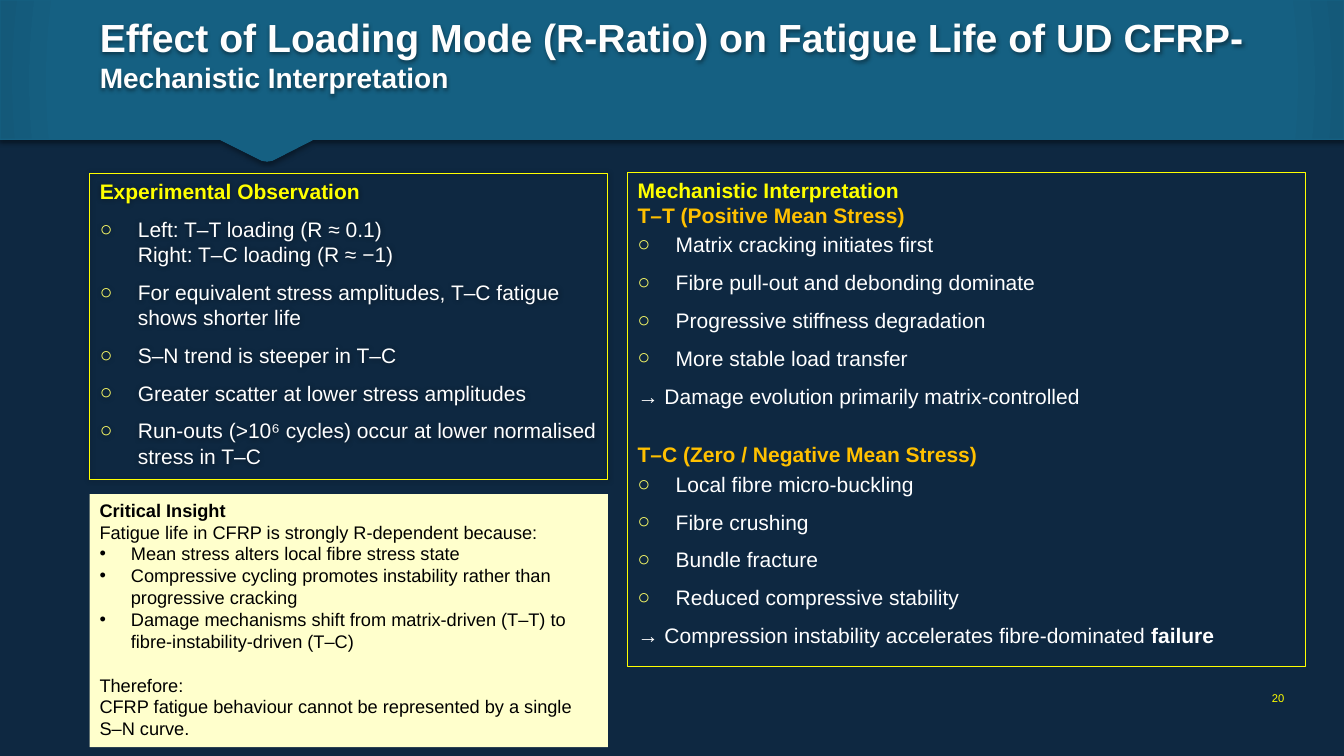
from dataclasses import dataclass

from lxml import etree
from pptx import Presentation
from pptx import util as u
from pptx.dml import color
from pptx.enum import text
from pptx.oxml import ns, parse_xml


@dataclass(frozen=True)
class Theme:
    font: str = "Arial"
    background: str = "0E2841"
    banner: str = "156082"
    banner_edge: str = "145979"
    title: str = "FEFEFE"
    white: str = "FFFFFF"
    black: str = "000000"
    yellow: str = "FFFF00"
    amber: str = "FFC000"
    bullet: str = "FFFF66"
    note: str = "FFFFCC"
    title_size: float = 28
    subtitle_size: float = 20
    body_size: float = 15
    note_size: float = 13
    number_size: float = 8


THEME = Theme()
DRAWING = 'xmlns:a="http://schemas.openxmlformats.org/drawingml/2006/main"'

OBSERVATIONS = [
    "Left: T–T loading (R ≈ 0.1)\nRight: T–C loading (R ≈ −1)",
    "For equivalent stress amplitudes, T–C fatigue shows shorter life",
    "S–N trend is steeper in T–C",
    "Greater scatter at lower stress amplitudes",
    "Run-outs (>10⁶ cycles) occur at lower normalised stress in T–C",
]
# Heading, bullets, conclusion, bold ending of the conclusion
MECHANISMS = [
    ("T–T (Positive Mean Stress)",
     ["Matrix cracking initiates first", "Fibre pull-out and debonding dominate",
      "Progressive stiffness degradation", "More stable load transfer"],
     "→ Damage evolution primarily matrix-controlled", ""),
    ("T–C (Zero / Negative Mean Stress)",
     ["Local fibre micro-buckling", "Fibre crushing", "Bundle fracture",
      "Reduced compressive stability"],
     "→ Compression instability accelerates fibre-dominated ", "failure"),
]
REASONS = [
    "Mean stress alters local fibre stress state",
    "Compressive cycling promotes instability rather than progressive cracking",
    "Damage mechanisms shift from matrix-driven (T–T) to fibre-instability-driven (T–C)",
]


def rgb(value):
    return color.RGBColor.from_string(value)


def place(shape, left, top, width, height):
    shape.left, shape.top = u.Cm(left), u.Cm(top)
    shape.width, shape.height = u.Cm(width), u.Cm(height)


def prepare_frame(shape, anchor=text.MSO_ANCHOR.TOP):
    frame = shape.text_frame
    frame.word_wrap = True
    frame.auto_size = text.MSO_AUTO_SIZE.NONE
    frame.vertical_anchor = anchor
    return frame


def add_text_box(slide, *bounds, anchor=text.MSO_ANCHOR.TOP):
    shape = slide.shapes.add_textbox(*map(u.Cm, bounds))
    prepare_frame(shape, anchor)
    return shape


def outline(shape, line_color, width=0.75):
    shape.line.color.rgb = rgb(line_color)
    shape.line.width = u.Pt(width)


def add_shadow(shape, blur, distance, degrees):
    shape.shadow.inherit = False
    effects = shape._element.spPr.find(ns.qn("a:effectLst"))
    effects.append(parse_xml(
        f'<a:outerShdw {DRAWING} blurRad="{u.Pt(blur)}" dist="{u.Pt(distance)}" '
        f'dir="{degrees * 60000}" algn="ctr" rotWithShape="0">'
        f'<a:srgbClr val="{THEME.black}"><a:alpha val="40000"/></a:srgbClr></a:outerShdw>'))


# Paragraphs and runs
def add_run(paragraph, content, size, text_color, bold=False):
    for index, line in enumerate(content.split("\n")):
        if index:
            paragraph.add_line_break()
        run = paragraph.add_run()
        run.text = line
        run.font.name = THEME.font
        run.font.size = u.Pt(size)
        run.font.bold = bold
        run.font.color.rgb = rgb(text_color)


def add_paragraph(frame, before=0, after=0, bullet=None, indent=0, bullet_color=None):
    first = frame.paragraphs[0]
    paragraph = frame.add_paragraph() if first.runs else first
    paragraph.alignment = text.PP_ALIGN.LEFT
    properties = paragraph._p.get_or_add_pPr()
    properties.set("marL", str(u.Cm(indent)))
    properties.set("indent", str(-u.Cm(indent)))
    if bullet:
        if bullet_color:
            holder = etree.SubElement(properties, ns.qn("a:buClr"))
            etree.SubElement(holder, ns.qn("a:srgbClr"), val=bullet_color)
        etree.SubElement(properties, ns.qn("a:buFont"), typeface=THEME.font)
        etree.SubElement(properties, ns.qn("a:buChar"), char=bullet)
    else:
        etree.SubElement(properties, ns.qn("a:buNone"))
    paragraph.space_before, paragraph.space_after = u.Pt(before), u.Pt(after)
    return paragraph


def add_heading(frame, content, text_color, before=0, after=0):
    paragraph = add_paragraph(frame, before, after)
    add_run(paragraph, content, THEME.body_size, text_color, bold=True)


def add_ring_bullets(frame, items):
    for item in items:
        paragraph = add_paragraph(frame, 3, 6, "○", 0.96, THEME.bullet)
        add_run(paragraph, item, THEME.body_size, THEME.white)


# Parts of the slide
def add_banner(slide):
    outline_points = [(0, 0), (0, 3.51), (5.54, 3.51), (6.6, 4.04), (6.73, 4.06),
                      (6.86, 4.04), (7.9, 3.51), (33.87, 3.51)]
    builder = slide.shapes.build_freeform(u.Cm(33.87), 0)
    builder.add_line_segments([(u.Cm(x), u.Cm(y)) for x, y in outline_points])
    banner = builder.convert_to_shape()
    outline(banner, THEME.banner, 0.79)
    stops = [(0, THEME.banner), (90, THEME.banner), (100, THEME.banner_edge)]
    stop_xml = "".join(f'<a:gs pos="{position * 1000}"><a:srgbClr val="{value}"/></a:gs>'
                       for position, value in stops)
    gradient = parse_xml(
        f'<a:gradFill {DRAWING}><a:gsLst>{stop_xml}</a:gsLst><a:path path="circle">'
        '<a:fillToRect l="100000" t="100000" r="100000" b="100000"/></a:path></a:gradFill>')
    banner._element.spPr.find(ns.qn("a:custGeom")).addnext(gradient)
    add_shadow(banner, 3, 1.4, 90)
    slide.shapes._spTree.insert(2, banner._element)


def fill_title(slide):
    title = slide.shapes.title
    place(title, 2.26, 0, 30.35, 2.69)
    paragraph = add_paragraph(prepare_frame(title, text.MSO_ANCHOR.MIDDLE))
    add_run(paragraph, "Effect of Loading Mode (R-Ratio) on Fatigue Life of UD CFRP- ",
            THEME.title_size, THEME.title, bold=True)
    add_run(paragraph, "Mechanistic Interpretation", THEME.subtitle_size, THEME.title, bold=True)
    add_shadow(title, 3, 1.4, 90)


def fill_observations(slide):
    body = slide.placeholders[1]
    place(body, 2.26, 4.37, 13.06, 7.72)
    outline(body, THEME.yellow)
    add_shadow(body, 4, 0, 240)
    frame = prepare_frame(body)
    add_heading(frame, "Experimental Observation", THEME.yellow, after=6)
    add_ring_bullets(frame, OBSERVATIONS)


def add_mechanisms(slide):
    box = add_text_box(slide, 15.82, 4.34, 17.07, 12.45)
    outline(box, THEME.yellow)
    frame = box.text_frame
    add_heading(frame, "Mechanistic Interpretation", THEME.yellow)
    for index, (heading, bullets, conclusion, ending) in enumerate(MECHANISMS):
        add_heading(frame, heading, THEME.amber, before=18 * index)
        add_ring_bullets(frame, bullets)
        paragraph = add_paragraph(frame, 3, 6)
        add_run(paragraph, conclusion, THEME.body_size, THEME.white)
        if ending:
            add_run(paragraph, ending, THEME.body_size, THEME.white, bold=True)


def add_insight(slide):
    box = add_text_box(slide, 2.26, 12.45, 13.06, 6.38)
    box.fill.solid()
    box.fill.fore_color.rgb = rgb(THEME.note)
    frame = box.text_frame

    def write(content, bold=False, **layout):
        add_run(add_paragraph(frame, **layout), content, THEME.note_size, THEME.black, bold)

    write("Critical Insight", bold=True)
    write("Fatigue life in CFRP is strongly R-dependent because:")
    for reason in REASONS:
        write(reason, bullet="•", indent=0.79)
    write("Therefore:", before=15.6)
    write("CFRP fatigue behaviour cannot be represented by a single S–N curve.")


def add_slide_number(slide):
    box = add_text_box(slide, 29.67, 16.43, 2.95, 1.37, anchor=text.MSO_ANCHOR.BOTTOM)
    box.text_frame.margin_bottom = u.Cm(0.03)
    paragraph = add_paragraph(box.text_frame)
    paragraph.alignment = text.PP_ALIGN.RIGHT
    add_run(paragraph, "20", THEME.number_size, THEME.yellow)


def main():
    presentation = Presentation()
    presentation.slide_width, presentation.slide_height = u.Cm(33.87), u.Cm(19.05)
    slide = presentation.slides.add_slide(presentation.slide_layouts[1])
    slide.background.fill.solid()
    slide.background.fill.fore_color.rgb = rgb(THEME.background)
    add_banner(slide)
    fill_title(slide)
    fill_observations(slide)
    add_slide_number(slide)
    add_mechanisms(slide)
    add_insight(slide)
    presentation.save("out.pptx")


if __name__ == "__main__":
    main()
